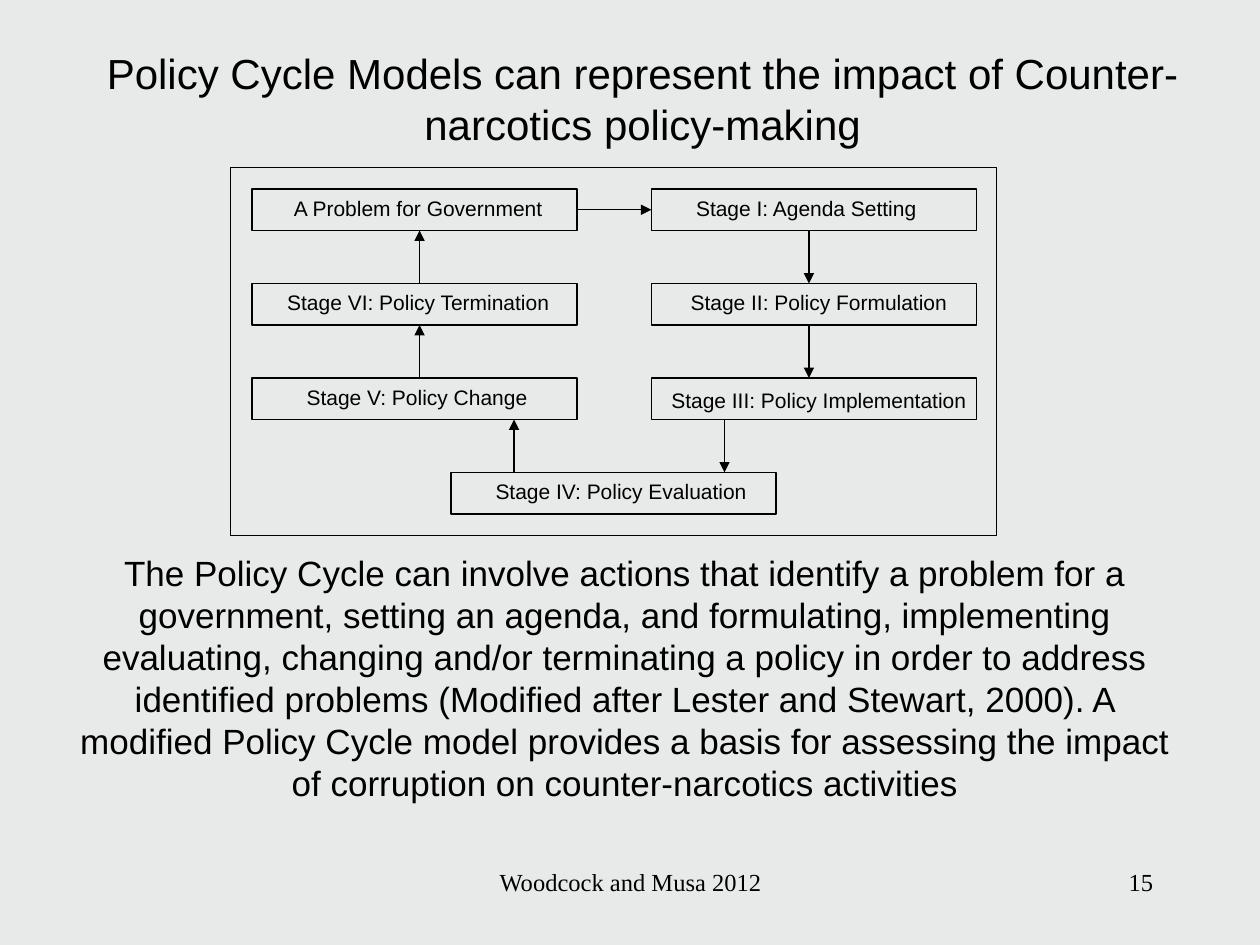
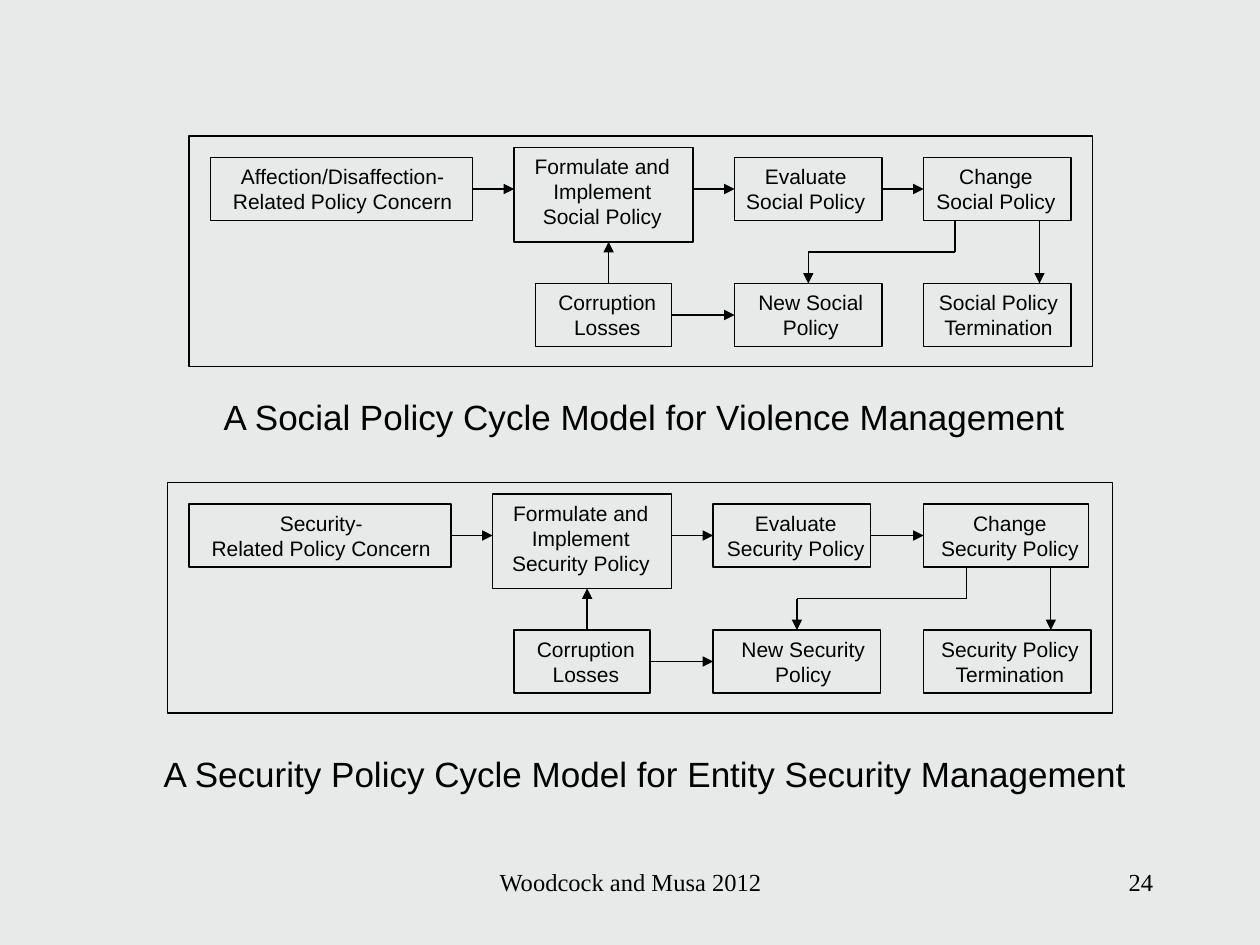
"""Build two slides about policy cycle models."""
from dataclasses import dataclass
from itertools import pairwise

from lxml.etree import SubElement
from pptx import Presentation
from pptx.dml.color import RGBColor
from pptx.enum.shapes import MSO_CONNECTOR, MSO_SHAPE
from pptx.enum.text import MSO_AUTO_SIZE, PP_ALIGN
from pptx.oxml.ns import qn
from pptx.slide import Slide
from pptx.util import Inches, Pt


@dataclass(frozen=True)
class Theme:
    ink: RGBColor = RGBColor(0x00, 0x00, 0x00)
    paper: RGBColor = RGBColor(0xE8, 0xEA, 0xE9)
    font: str = "Arial"
    footer_font: str = "Times New Roman"
    title_size: int = 24
    body_size: int = 20
    footer_size: int = 14
    label_size: int = 12
    line_width: float = 0.75


@dataclass(frozen=True)
class Step:
    left: float
    top: float
    width: float
    height: float
    lines: tuple[str, ...]
    label_width: float
    shift: float = 0
    drop: float = 0

    @property
    def right(self) -> float:
        return self.left + self.width

    @property
    def bottom(self) -> float:
        return self.top + self.height

    @property
    def center(self) -> float:
        return self.left + self.width / 2


@dataclass(frozen=True)
class Panel:
    left: float
    top: float
    width: float
    subject: str
    concern: str
    change_left: float
    evaluate_width: float
    change_width: float
    outcome_width: float
    subject_label: float
    new_label: float
    shifts: tuple[float, ...]
    bend: float


THEME = Theme()
ROW_GAP = 0.75
STAGE_WIDTH, STAGE_HEIGHT = 2.58, 0.33
LEFT_COLUMN, RIGHT_COLUMN, MIDDLE_COLUMN = 2.0, 5.17, 3.58
STAGE_TOPS = [1.5 + ROW_GAP * row for row in range(4)]

PANELS = (
    Panel(1.5, 1.08, 7.17, "Social", "Affection/Disaffection-", 5.83,
          1.17, 1.17, 1.17, 1.17, 1.08, (-0.02, -0.01, 0.02, 0.01), 0.25),
    Panel(1.33, 3.83, 7.5, "Security", "Security-", 6.0,
          1.25, 1.31, 1.33, 1.32, 1.22, (0.03, 0.03, 0.05, 0.02), 0.34),
)


def add_text(page: Slide, left: float, top: float, width: float, height: float,
             lines: tuple[str, ...], size: int, align: PP_ALIGN = PP_ALIGN.CENTER,
             font: str = THEME.font, wrap: bool = False, grow: bool = True) -> None:
    """Add a text box with one paragraph per line."""
    box = page.shapes.add_textbox(Inches(left), Inches(top), Inches(width), Inches(height))
    frame = box.text_frame
    frame.word_wrap = wrap
    frame.auto_size = MSO_AUTO_SIZE.SHAPE_TO_FIT_TEXT if grow else MSO_AUTO_SIZE.NONE
    for index, line in enumerate(lines):
        para = frame.add_paragraph() if index else frame.paragraphs[0]
        para.alignment = align
        span = para.add_run()
        span.text = line
        span.font.name = font
        span.font.size = Pt(size)
        span.font.color.rgb = THEME.ink


def add_outline(page: Slide, left: float, top: float, width: float, height: float) -> None:
    """Add an unfilled rectangle."""
    box = page.shapes.add_shape(
        MSO_SHAPE.RECTANGLE, Inches(left), Inches(top), Inches(width), Inches(height))
    box.shadow.inherit = False
    box.fill.background()
    box.line.color.rgb = THEME.ink
    box.line.width = Pt(THEME.line_width)


def add_step(page: Slide, step: Step) -> None:
    """Add a step's outline and its label."""
    add_outline(page, step.left, step.top, step.width, step.height)
    add_text(page, step.center + step.shift - step.label_width / 2, step.top + step.drop,
             step.label_width, 0.1 + 0.2 * len(step.lines), step.lines, THEME.label_size)


def add_arrow(page: Slide, *points: tuple[float, float]) -> None:
    """Join points with straight lines and put an arrowhead on the last."""
    for start, end in pairwise(points):
        line = page.shapes.add_connector(
            MSO_CONNECTOR.STRAIGHT, *(Inches(value) for value in start + end))
        line.line.color.rgb = THEME.ink
        line.line.width = Pt(THEME.line_width)
        properties = line.element.spPr
        if end == points[-1]:
            SubElement(properties.find(qn("a:ln")), qn("a:tailEnd"), type="triangle")
        SubElement(properties, qn("a:effectLst"))


def add_page(deck: Presentation, number: int) -> Slide:
    """Add a slide with the shared background and footer."""
    page = deck.slides.add_slide(deck.slide_layouts[6])
    page.background.fill.solid()
    page.background.fill.fore_color.rgb = THEME.paper
    add_text(page, 3.42, 6.83, 3.17, 0.5, ("Woodcock and Musa 2012",), THEME.footer_size,
             font=THEME.footer_font, wrap=True, grow=False)
    add_text(page, 7.17, 6.83, 2.08, 0.5, (str(number),), THEME.footer_size,
             PP_ALIGN.RIGHT, THEME.footer_font, wrap=True, grow=False)
    return page


def add_stage(page: Slide, left: float, row: int, text: str, label_width: float,
              shift: float, drop: float = 0) -> None:
    """Add one stage of the general policy cycle."""
    add_step(page, Step(left, STAGE_TOPS[row], STAGE_WIDTH, STAGE_HEIGHT,
                        (text,), label_width, shift, drop))


def build_cycle(deck: Presentation) -> None:
    """Build the slide showing the general policy cycle."""
    page = add_page(deck, 15)
    add_text(page, 0.7, 0.33, 8.8, 0.9,
             ("Policy Cycle Models can represent the impact of Counter-",
              "narcotics policy-making"), THEME.title_size)
    add_outline(page, 1.83, 1.33, 6.08, 2.92)
    add_stage(page, LEFT_COLUMN, 0, "A Problem for Government", 2.2, 0.03)
    add_stage(page, RIGHT_COLUMN, 0, "Stage I: Agenda Setting", 1.98, -0.06)
    add_stage(page, RIGHT_COLUMN, 1, "Stage II: Policy Formulation", 2.26, 0.04)
    add_stage(page, RIGHT_COLUMN, 2, "Stage III: Policy Implementation", 2.57, 0.04, 0.03)
    add_stage(page, MIDDLE_COLUMN, 3, "Stage IV: Policy Evaluation", 2.22, 0.06)
    add_stage(page, LEFT_COLUMN, 2, "Stage V: Policy Change", 1.98, 0.02)
    add_stage(page, LEFT_COLUMN, 1, "Stage VI: Policy Termination", 2.32, 0.03)
    middle = STAGE_TOPS[0] + STAGE_HEIGHT / 2
    add_arrow(page, (LEFT_COLUMN + STAGE_WIDTH, middle), (RIGHT_COLUMN, middle))
    for row, (up, down) in enumerate(((3.33, 6.42), (3.33, 6.42), (4.08, 5.75))):
        upper, lower = STAGE_TOPS[row] + STAGE_HEIGHT, STAGE_TOPS[row + 1]
        add_arrow(page, (down, upper), (down, lower))
        add_arrow(page, (up, lower), (up, upper))
    add_text(page, 0.42, 4.33, 9.08, 2.1, (
        "The Policy Cycle can involve actions that identify a problem for a government, "
        "setting an agenda, and formulating, implementing evaluating, changing and/or "
        "terminating a policy in order to address identified problems (Modified after "
        "Lester and Stewart, 2000). A modified Policy Cycle model provides a basis for "
        "assessing the impact of corruption on counter-narcotics activities",),
        THEME.body_size, wrap=True)


def add_panel(page: Slide, panel: Panel) -> None:
    """Add a framed policy cycle for one subject."""
    add_outline(page, panel.left, panel.top, panel.width, 1.83)
    first, second = panel.top + 0.17, panel.top + 1.17
    evaluate_left, change_left = panel.left + 4.33, panel.left + panel.change_left
    policy = f"{panel.subject} Policy"
    evaluate_shift, change_shift, new_shift, end_shift = panel.shifts
    concern = Step(panel.left + 0.17, first, 2.08, 0.5,
                   (panel.concern, "Related Policy Concern"), 1.96, 0.01)
    formulate = Step(panel.left + 2.58, panel.top + 0.09, 1.42, 0.75,
                     ("Formulate and", "Implement", policy), 1.32, -0.01)
    evaluate = Step(evaluate_left, first, panel.evaluate_width, 0.5,
                    ("Evaluate", policy), panel.subject_label, evaluate_shift)
    change = Step(change_left, first, panel.change_width, 0.5,
                  ("Change", policy), panel.subject_label, change_shift)
    losses = Step(panel.left + 2.75, second, 1.08, 0.5, ("Corruption", "Losses"), 1.0, 0.03)
    renewal = Step(evaluate_left, second, panel.outcome_width, 0.5,
                   (f"New {panel.subject}", "Policy"), panel.new_label, new_shift)
    ending = Step(change_left, second, panel.outcome_width, 0.5,
                  (policy, "Termination"), panel.subject_label, end_shift)
    for step in (concern, formulate, evaluate, change, losses, renewal, ending):
        add_step(page, step)

    flow = panel.top + 0.42
    for source, target in pairwise((concern, formulate, evaluate, change)):
        add_arrow(page, (source.right, flow), (target.left, flow))
    add_arrow(page, (losses.right, flow + 1), (renewal.left, flow + 1))
    rise = losses.left + 0.58
    add_arrow(page, (rise, losses.top), (rise, formulate.bottom))
    bend, fall = change.left + panel.bend, change.left + panel.bend + 0.67
    shelf = change.bottom + 0.25
    add_arrow(page, (bend, change.bottom), (bend, shelf),
              (renewal.center, shelf), (renewal.center, renewal.top))
    add_arrow(page, (fall, change.bottom), (fall, ending.top))


def build_models(deck: Presentation) -> None:
    """Build the slide showing the social and security models."""
    page = add_page(deck, 24)
    for panel in PANELS:
        add_panel(page, panel)
    add_text(page, 1.65, 3.09, 6.93, 0.43,
             ("A Social Policy Cycle Model for Violence Management",), THEME.body_size)
    add_text(page, 0.91, 5.92, 8.42, 0.77,
             ("A Security Policy Cycle Model for Entity Security Management",),
             THEME.body_size, wrap=True)


def main() -> None:
    """Build and save the deck."""
    deck = Presentation()
    deck.slide_width, deck.slide_height = Inches(10), Inches(7.5)
    build_cycle(deck)
    build_models(deck)
    deck.save("out.pptx")


if __name__ == "__main__":
    main()
